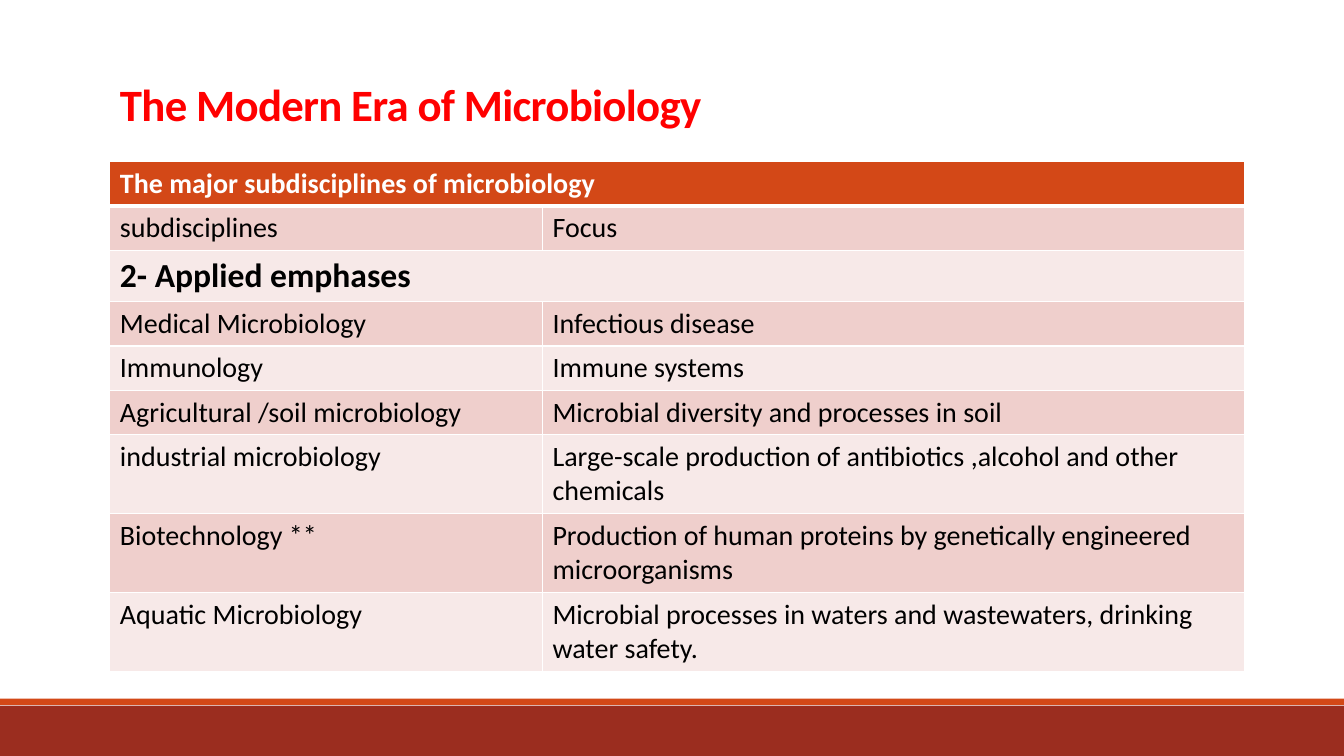
"""Build the slide on the applied subdisciplines of microbiology."""
from lxml.etree import SubElement
from pptx import Presentation
from pptx.dml.color import RGBColor
from pptx.enum.shapes import MSO_SHAPE
from pptx.enum.text import MSO_ANCHOR, MSO_AUTO_SIZE, PP_ALIGN
from pptx.oxml.ns import qn
from pptx.util import Pt

TITLE = "The Modern Era of Microbiology"
ROWS = [
    ("The major subdisciplines of microbiology",),
    ("subdisciplines", "Focus"),
    ("2- Applied emphases",),
    ("Medical Microbiology", "Infectious disease"),
    ("Immunology", "Immune systems"),
    ("Agricultural /soil microbiology", "Microbial diversity and processes in soil"),
    ("industrial microbiology",
     "Large-scale production of antibiotics ,alcohol and other chemicals"),
    ("Biotechnology **",
     "Production of human proteins by genetically engineered microorganisms"),
    ("Aquatic Microbiology",
     "Microbial processes in waters and wastewaters, drinking water safety."),
]

RED = RGBColor(0xFF, 0, 0)
BLACK = RGBColor(0, 0, 0)
WHITE = RGBColor(0xFF, 0xFF, 0xFF)
RUST = RGBColor(0xD3, 0x48, 0x17)
BRICK = RGBColor(0x9B, 0x2D, 0x1F)
ROSE = RGBColor(0xEF, 0xCF, 0xCC)
BLUSH = RGBColor(0xF7, 0xE9, 0xE8)

WIDE, HIGH = 960, 540
LEFT, TOP = 78.5, 115.5
COLS = (309, 501.5)
TALL = [31.5, 31.5, 36.4] + [31.5] * 3 + [56.4] * 3
BANDS = [(504, 36, BRICK), (499, 4.6, RUST)]

HEAD = {"name": "Calibri", "size": Pt(32), "bold": True}
TOPIC = {"name": "Calibri", "size": Pt(20), "bold": True}
GROUP = {"name": "Calibri", "size": Pt(24), "bold": True}
BODY = {"name": "Calibri", "size": Pt(20), "bold": False}
LOOKS = {0: (TOPIC, WHITE, RUST), 2: (GROUP, BLACK, BLUSH)}


def style(font, look, color):
    """Apply format values and a colour to a font."""
    for key, value in look.items():
        setattr(font, key, value)
    font.color.rgb = color


def edge(cell, sizes):
    """Draw white cell borders of the given widths."""
    props = cell._tc.get_or_add_tcPr()
    for side, size in zip("LRTB", sizes):
        line = SubElement(props, qn(f"a:ln{side}"), w=str(Pt(size)))
        fill = SubElement(line, qn("a:solidFill"))
        SubElement(fill, qn("a:srgbClr"), val=str(WHITE))


def add_bands(slide):
    """Add the colour bands at the foot."""
    for top, tall, color in BANDS:
        band = slide.shapes.add_shape(
            MSO_SHAPE.RECTANGLE, 0, Pt(top), Pt(WIDE), Pt(tall))
        band.shadow.inherit = False
        band.fill.solid()
        band.fill.fore_color.rgb = color
        band.line.fill.background()


def add_title(slide):
    """Place and format the title."""
    title = slide.shapes.title
    place = {"left": LEFT, "top": 35.3, "width": 792, "height": 61.9}
    for key, value in place.items():
        setattr(title, key, Pt(value))
    frame = title.text_frame
    frame.text = TITLE
    frame.auto_size = MSO_AUTO_SIZE.NONE
    frame.vertical_anchor = MSO_ANCHOR.BOTTOM
    para = frame.paragraphs[0]
    para.alignment = PP_ALIGN.LEFT
    para.line_spacing = 0.85
    run = para.runs[0]
    style(run.font, HEAD, RED)
    run._r.get_or_add_rPr().set("spc", "-50")


def add_grid(slide):
    """Add the table of subdisciplines."""
    grid = slide.shapes.add_table(
        len(ROWS), len(COLS), Pt(LEFT), Pt(TOP), Pt(sum(COLS)), Pt(sum(TALL))).table
    for col, wide in zip(grid.columns, COLS):
        col.width = Pt(wide)
    for i, words in enumerate(ROWS):
        grid.rows[i].height = Pt(TALL[i])
        look, ink, back = LOOKS.get(i, (BODY, BLACK, ROSE if i % 2 else BLUSH))
        if len(words) == 1:
            grid.cell(i, 0).merge(grid.cell(i, 1))
        for j in range(len(COLS)):
            cell = grid.cell(i, j)
            edge(cell, (1, 1, 3 if i == 1 else 1, 3 if i == 0 else 1))
            cell.fill.solid()
            cell.fill.fore_color.rgb = back
            if j < len(words):
                cell.text = words[j]
                style(cell.text_frame.paragraphs[0].runs[0].font, look, ink)


def main():
    """Make and save the deck."""
    deck = Presentation()
    deck.slide_width, deck.slide_height = Pt(WIDE), Pt(HIGH)
    slide = deck.slides.add_slide(deck.slide_layouts[5])
    add_bands(slide)
    add_title(slide)
    add_grid(slide)
    deck.save("out.pptx")


if __name__ == "__main__":
    main()
